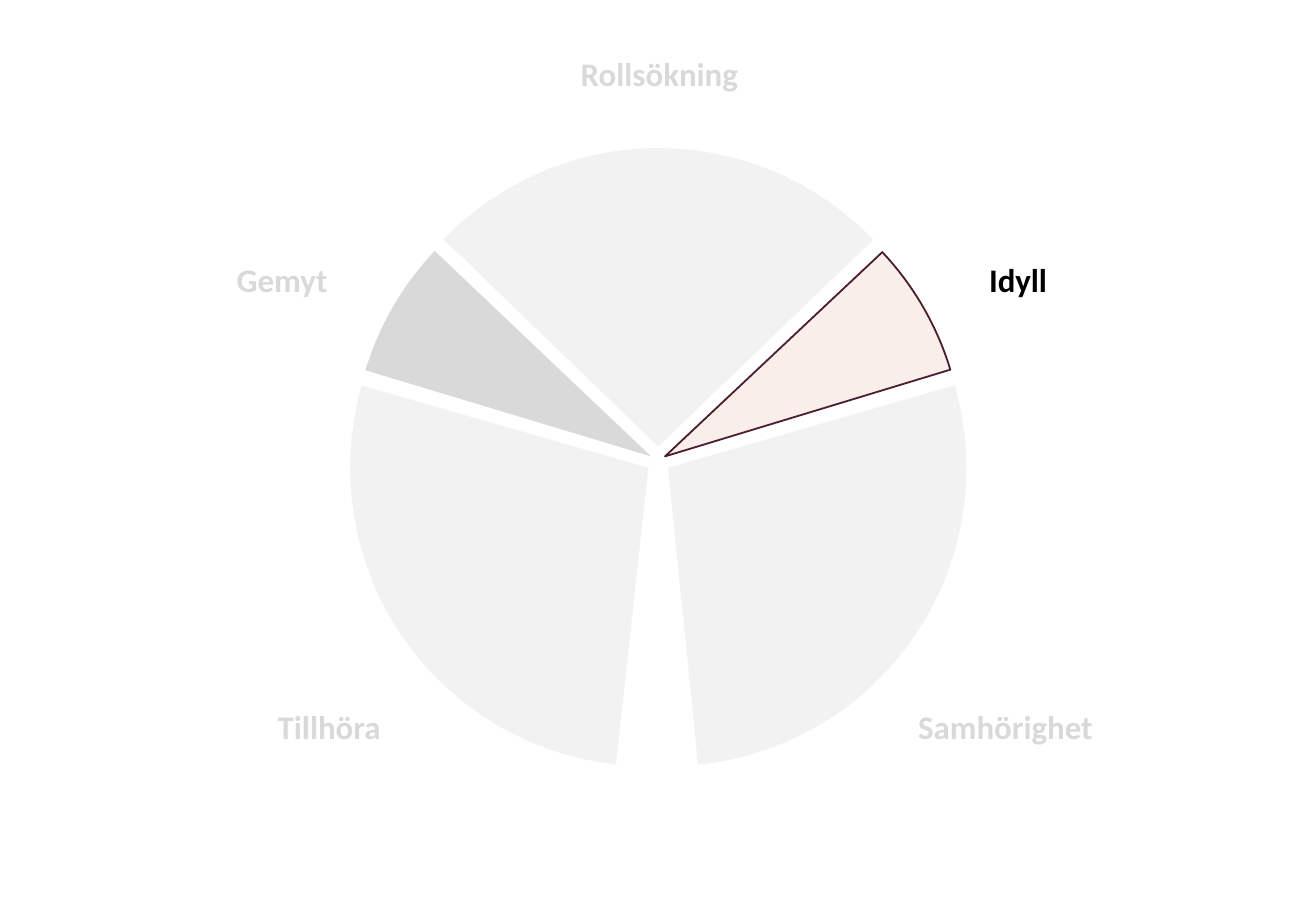
import pptx
import pptx.util
import pptx.dml.color
import pptx.enum.shapes
import pptx.enum.text

Cm, Pt = pptx.util.Cm, pptx.util.Pt
RGB = pptx.dml.color.RGBColor

PALE = RGB(0xF2, 0xF2, 0xF2)
GREY = RGB(0xD9, 0xD9, 0xD9)
ROSE = RGB(0xF9, 0xEE, 0xE9)
WINE = RGB(0x4A, 0x1F, 0x2F)
BLACK = RGB(0, 0, 0)

INCH = 2.54  # centimetres
WIDE, TALL = 10 * INCH, 6.95 * INCH

# Wedges: left, top, turn, start angle, end angle, fill, line
SIZE = 11.51
WEDGES = [
    (6.95, 2.86, 60.9, 163.07, 255.22, PALE, None),
    (6.76, 3.27, 301.9, 154.33, 254.11, PALE, None),
    (7.14, 3.27, 176.6, 167.34, 267.65, PALE, None),
    (7.08, 3.05, 157, 159.78, 186.1, ROSE, WINE),
    (6.81, 3.05, 39.1, 157.66, 184.39, GREY, None),
]

# Labels: text, left, top, width, colour
HIGH = 1.02
LABELS = [
    ("Rollsökning", 10.96, 0.91, 3.56, GREY),
    ("Idyll", 18.84, 4.88, 1.65, BLACK),
    ("Gemyt", 4.32, 4.88, 2.29, GREY),
    ("Samhörighet", 17.47, 13.5, 3.91, GREY),
    ("Tillhöra", 5.11, 13.5, 2.51, GREY),
]
FONT = {"name": "Calibri", "size": Pt(18), "bold": True}
FRAME = {"word_wrap": False,
         "auto_size": pptx.enum.text.MSO_AUTO_SIZE.SHAPE_TO_FIT_TEXT}
UNIT = 0.6  # one degree as an adjustment value

deck = pptx.Presentation()
deck.slide_width, deck.slide_height = Cm(WIDE), Cm(TALL)
slide = deck.slides.add_slide(deck.slide_layouts[6])

# Circle of wedges
wheel = slide.shapes.add_group_shape()
for left, top, turn, start, end, fill, line in WEDGES:
    wedge = wheel.shapes.add_shape(pptx.enum.shapes.MSO_SHAPE.PIE,
                                   Cm(left), Cm(top), Cm(SIZE), Cm(SIZE))
    wedge.rotation = turn
    for i, angle in enumerate((start, end)):
        wedge.adjustments[i] = angle * UNIT
    wedge.shadow.inherit = False
    wedge.fill.solid()
    wedge.fill.fore_color.rgb = fill
    if line is None:
        wedge.line.fill.background()
    else:
        wedge.line.color.rgb = line
        wedge.line.width = Pt(1)

# Labels around the circle
for text, left, top, width, colour in LABELS:
    box = slide.shapes.add_textbox(Cm(left), Cm(top), Cm(width), Cm(HIGH))
    frame = box.text_frame
    for key, value in FRAME.items():
        setattr(frame, key, value)
    run = frame.paragraphs[0].add_run()
    run.text = text
    for key, value in FONT.items():
        setattr(run.font, key, value)
    run.font.color.rgb = colour

deck.save("out.pptx")
